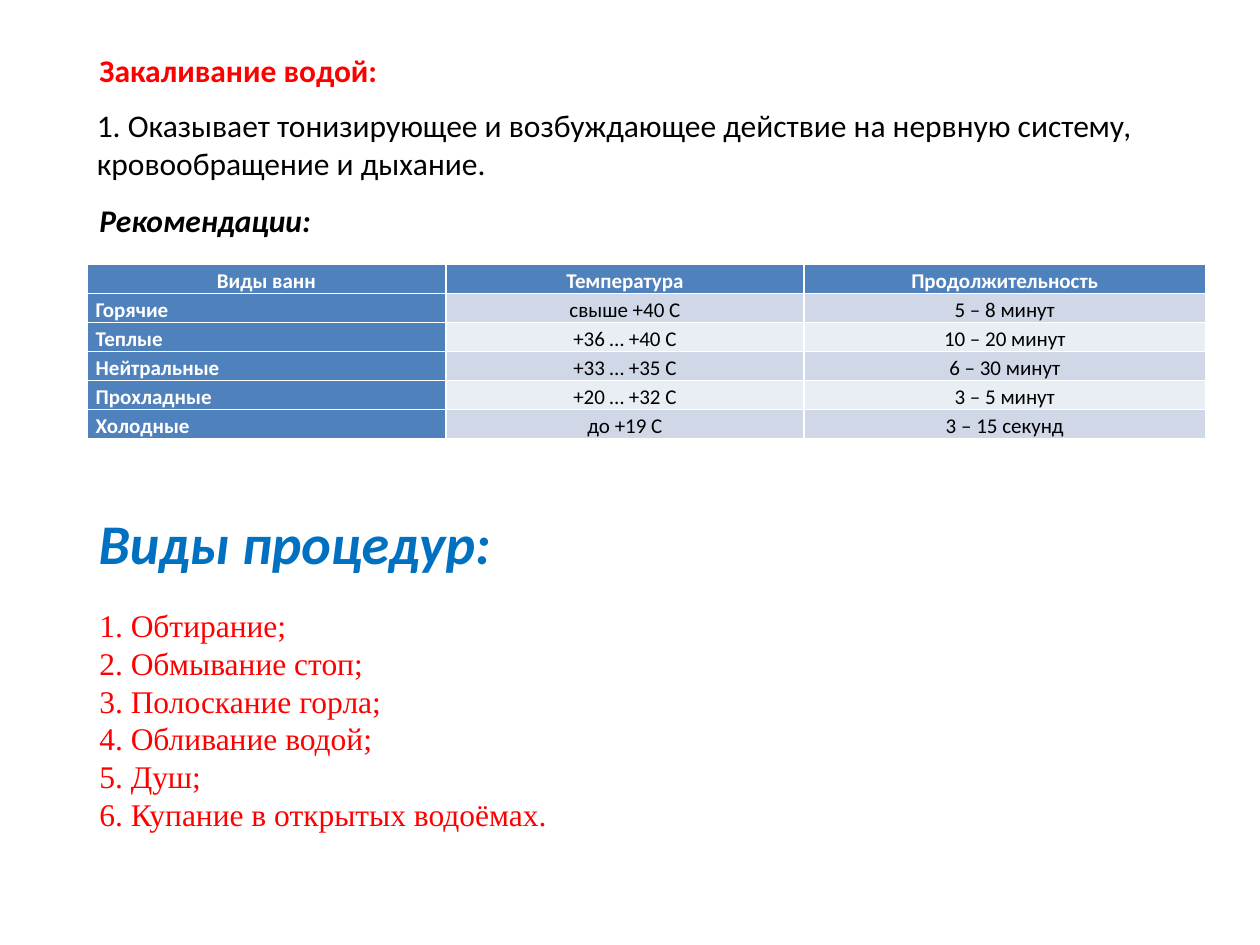
from pptx import Presentation
from pptx.dml.color import RGBColor
from pptx.enum.text import MSO_AUTO_SIZE, PP_ALIGN
from pptx.util import Inches, Pt

CENTER = PP_ALIGN.CENTER
JUSTIFY = PP_ALIGN.JUSTIFY
FIT_SHAPE = MSO_AUTO_SIZE.SHAPE_TO_FIT_TEXT

COLORS = {
    "red": "FF0000",
    "black": "000000",
    "white": "FFFFFF",
    "title_blue": "0070C0",
    "header": "4F81BD",
    "odd_row": "D0D8E8",
    "even_row": "E9EDF4",
}


def style_font(para, size, color, name="Calibri", bold=False, italic=False):
    para.font.name = name
    para.font.size = Pt(size)
    para.font.bold = bold
    para.font.italic = italic
    para.font.color.rgb = RGBColor.from_string(COLORS[color])


def add_text(page, place, lines, wrap=False, align=None, **font):
    box = page.shapes.add_textbox(*(Inches(length) for length in place))
    frame = box.text_frame
    frame.word_wrap = wrap
    frame.auto_size = FIT_SHAPE
    frame.text = "\n".join(lines)
    for para in frame.paragraphs:
        para.alignment = align
        style_font(para, **font)


deck = Presentation()
deck.slide_width = Inches(10)
deck.slide_height = Inches(7.5)
page = deck.slides.add_slide(deck.slide_layouts[6])

# Heading and introduction
add_text(page, (0.69, 0.36, 2.42, 0.4), ["Закаливание водой:"],
         size=18, color="red", bold=True)
add_text(page, (0.67, 0.79, 8.9, 0.71),
         ["1. Оказывает тонизирующее и возбуждающее действие на нервную "
          "систему, кровообращение и дыхание."],
         wrap=True, size=18, color="black")

# Table of baths; white borders come from the default table style
bath_rows = [
    ("Виды ванн", "Температура", "Продолжительность"),
    ("Горячие", "свыше +40 С", "5 – 8 минут"),
    ("Теплые", "+36 … +40 С", "10 – 20 минут"),
    ("Нейтральные", "+33 … +35 С", "6 – 30 минут"),
    ("Прохладные", "+20 … +32 С", "3 – 5 минут"),
    ("Холодные", "до +19 С", "3 – 15 секунд"),
]
column_widths = (2.85, 2.84, 3.19)
table = page.shapes.add_table(
    len(bath_rows), len(column_widths), Inches(0.69), Inches(2.1),
    Inches(sum(column_widths)), Inches(0.23 * len(bath_rows))).table
table.first_col = True
for column, width in zip(table.columns, column_widths):
    column.width = Inches(width)

for row_index, values in enumerate(bath_rows):
    for column_index, value in enumerate(values):
        is_header = row_index == 0 or column_index == 0
        if is_header:
            fill = "header"
        else:
            fill = "odd_row" if row_index % 2 else "even_row"
        cell = table.cell(row_index, column_index)
        cell.margin_left = cell.margin_right = Inches(0.07)
        cell.margin_top = cell.margin_bottom = Inches(0)
        cell.fill.solid()
        cell.fill.fore_color.rgb = RGBColor.from_string(COLORS[fill])
        cell.text = value
        para = cell.text_frame.paragraphs[0]
        para.alignment = JUSTIFY if row_index and column_index == 0 else CENTER
        para.line_spacing = 1.15
        style_font(para, 12, "white" if is_header else "black", bold=is_header)

# Subheadings
add_text(page, (0.69, 1.55, 1.96, 0.4), ["Рекомендации:"],
         size=18, color="black", bold=True, italic=True)
add_text(page, (0.67, 3.99, 3.34, 0.64), ["Виды процедур:"], align=CENTER,
         size=32, color="title_blue", bold=True, italic=True)

# List of procedures
procedures = [
    "1. Обтирание;",
    "2. Обмывание стоп;",
    "3. Полоскание горла;",
    "4. Обливание водой;",
    "5. Душ;",
    "6. Купание в открытых водоёмах.",
]
add_text(page, (0.69, 4.76, 5, 1.92), procedures, wrap=True,
         size=18, color="red", name="Times New Roman")

deck.save("out.pptx")
